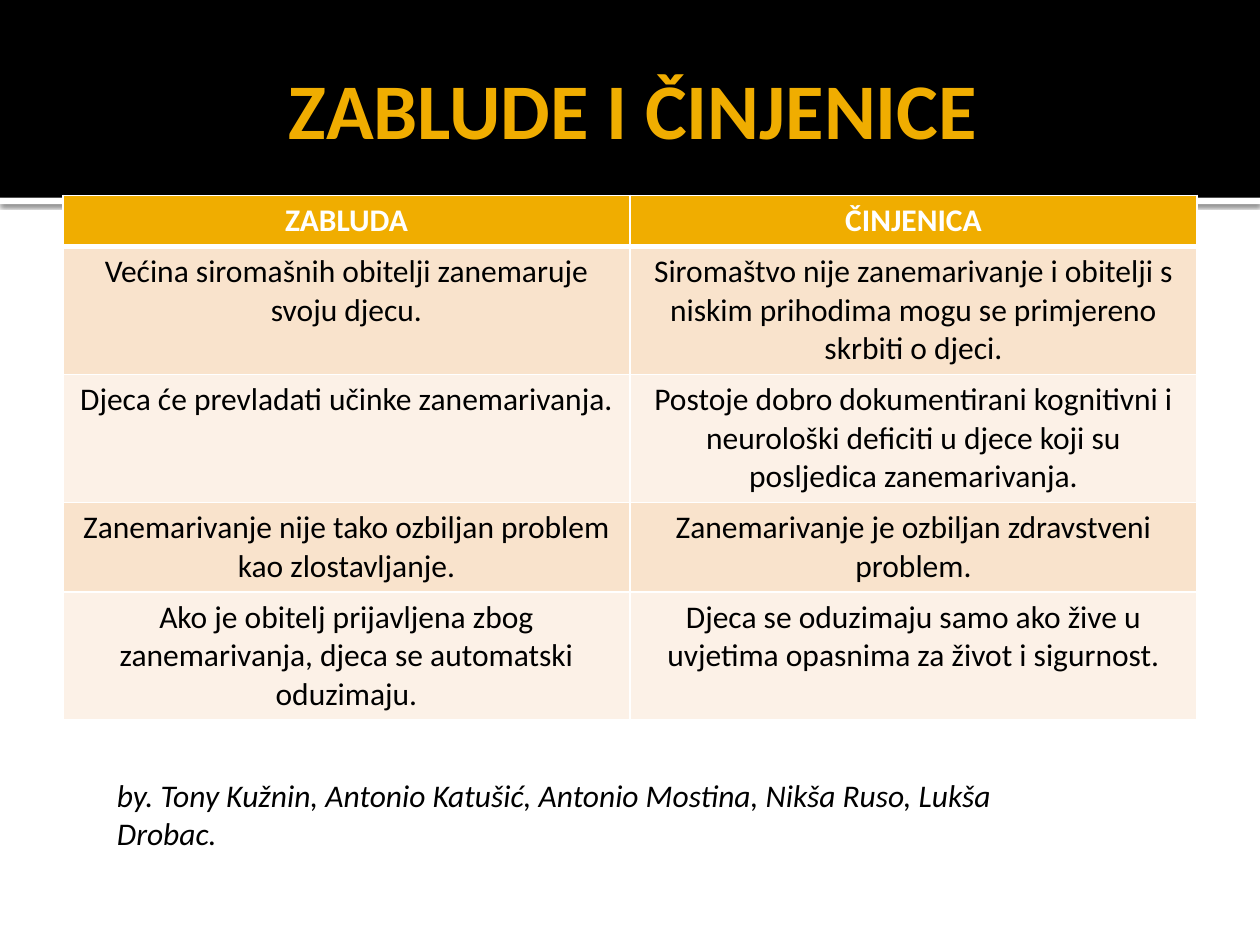
"""Build the slide that sets misconceptions about child neglect against facts."""
from lxml.etree import SubElement
from pptx import Presentation
from pptx.dml.color import RGBColor
from pptx.enum.shapes import MSO_SHAPE
from pptx.enum.text import MSO_ANCHOR, MSO_AUTO_SIZE, PP_ALIGN
from pptx.oxml import parse_xml
from pptx.oxml.ns import nsdecls, qn
from pptx.util import Inches, Pt

BLACK = RGBColor(0x00, 0x00, 0x00)
WHITE = RGBColor(0xFF, 0xFF, 0xFF)
GOLD = RGBColor(0xF0, 0xAD, 0x00)
PEACH = RGBColor(0xF9, 0xE3, 0xCC)
CREAM = RGBColor(0xFC, 0xF1, 0xE7)

TITLE = "ZABLUDE I ČINJENICE"
AUTHORS = "by. Tony Kužnin, Antonio Katušić, Antonio Mostina, Nikša Ruso, Lukša Drobac."
ROWS = [
    ("ZABLUDA", "ČINJENICA"),
    ("Većina siromašnih obitelji zanemaruje svoju djecu.",
     "Siromaštvo nije zanemarivanje i obitelji s niskim prihodima mogu se "
     "primjereno skrbiti o djeci."),
    ("Djeca će prevladati učinke zanemarivanja.",
     "Postoje dobro dokumentirani kognitivni i neurološki deficiti u djece koji su "
     "posljedica zanemarivanja."),
    ("Zanemarivanje nije tako ozbiljan problem kao zlostavljanje.",
     "Zanemarivanje je ozbiljan zdravstveni problem."),
    ("Ako je obitelj prijavljena zbog zanemarivanja, djeca se automatski oduzimaju.",
     "Djeca se oduzimaju samo ako žive u uvjetima opasnima za život i sigurnost."),
]
ROW_HEIGHTS = [0.4, 1.01, 1.01, 0.71, 1.01]
BANDS = [(0, 1.57, WHITE), (0, 0, BLACK)]
BAND_HEIGHTS = [0.05, 1.57]
SHADOW = (
    f'<a:effectLst {nsdecls("a")}><a:outerShdw blurRad="{Pt(2.5)}" dist="{Pt(0.8)}" '
    'dir="5400000" algn="t" rotWithShape="0"><a:srgbClr val="000000">'
    '<a:alpha val="60000"/></a:srgbClr></a:outerShdw></a:effectLst>'
)


def write(frame, text, align, color, **formats):
    frame.text = text
    paragraph = frame.paragraphs[0]
    paragraph.alignment = align
    font = paragraph.runs[0].font
    font.color.rgb = color
    for name, value in {"name": "Calibri", "size": Pt(18), **formats}.items():
        setattr(font, name, value)


def add_border(cell, side, width):
    line = SubElement(cell._tc.get_or_add_tcPr(), qn(f"a:ln{side}"), w=str(Pt(width)))
    SubElement(SubElement(line, qn("a:solidFill")), qn("a:srgbClr"), val=str(WHITE))


def add_bands(slide):
    for order, ((left, top, color), height) in enumerate(zip(BANDS, BAND_HEIGHTS)):
        band = slide.shapes.add_shape(
            MSO_SHAPE.RECTANGLE, Inches(left), Inches(top), Inches(10), Inches(height))
        band.fill.solid()
        band.fill.fore_color.rgb = color
        band.line.fill.background()
        band.shadow.inherit = False
        if color == WHITE:
            properties = band._element.spPr
            properties.replace(properties.find(qn("a:effectLst")), parse_xml(SHADOW))
        slide.shapes._spTree.insert(2 + order, band._element)


def add_title(slide):
    title = slide.shapes.title
    place = {"left": 0.5, "top": 0.17, "width": 9, "height": 1.37}
    for name, value in place.items():
        setattr(title, name, Inches(value))
    frame = title.text_frame
    layout = {"auto_size": MSO_AUTO_SIZE.NONE, "vertical_anchor": MSO_ANCHOR.MIDDLE,
              "margin_left": Inches(0.1), "margin_right": Inches(0.05)}
    for name, value in layout.items():
        setattr(frame, name, value)
    write(frame, TITLE, PP_ALIGN.CENTER, GOLD, size=Pt(45), bold=True)


def add_comparison(slide):
    comparison = slide.shapes.add_table(
        len(ROWS), 2, Inches(0.5), Inches(1.55), Inches(9), Inches(sum(ROW_HEIGHTS))).table
    for index, (texts, height) in enumerate(zip(ROWS, ROW_HEIGHTS)):
        header = index == 0
        comparison.rows[index].height = Inches(height)
        for column, text in enumerate(texts):
            cell = comparison.cell(index, column)
            write(cell.text_frame, text, PP_ALIGN.CENTER,
                  WHITE if header else BLACK, bold=header)
            widths = {"L": 1, "R": 1, "T": 3 if index == 1 else 1, "B": 3 if header else 1}
            for side, width in widths.items():
                add_border(cell, side, width)
            cell.fill.solid()
            cell.fill.fore_color.rgb = GOLD if header else (CREAM, PEACH)[index % 2]


def add_authors(slide):
    authors = slide.shapes.add_textbox(
        Inches(0.83), Inches(6.11), Inches(7.56), Inches(0.71))
    authors.text_frame.word_wrap = True
    authors.text_frame.auto_size = MSO_AUTO_SIZE.SHAPE_TO_FIT_TEXT
    write(authors.text_frame, AUTHORS, PP_ALIGN.LEFT, BLACK, italic=True)


def main():
    deck = Presentation()
    deck.slide_width, deck.slide_height = Inches(10), Inches(7.5)
    slide = deck.slides.add_slide(deck.slide_layouts[5])
    for add_part in (add_bands, add_title, add_comparison, add_authors):
        add_part(slide)
    deck.save("out.pptx")


if __name__ == "__main__":
    main()
